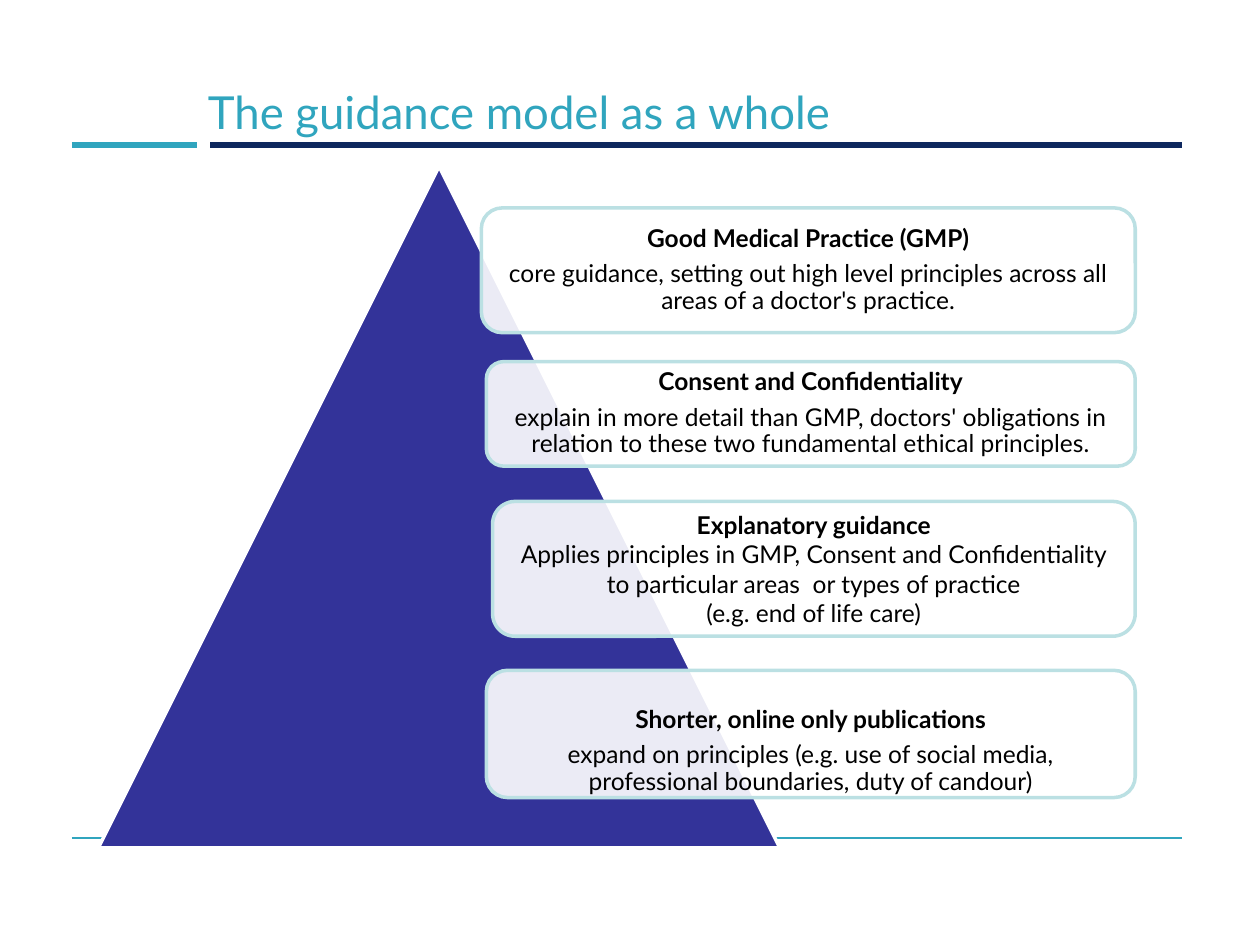
from dataclasses import dataclass

import pptx
import pptx.dml.color
import pptx.enum.shapes
import pptx.enum.text
import pptx.oxml
import pptx.oxml.ns
import pptx.slide
import pptx.util
from pptx.util import Inches, Pt

ALIGN = pptx.enum.text.PP_ALIGN
ANCHOR = pptx.enum.text.MSO_ANCHOR
SHAPE = pptx.enum.shapes.MSO_SHAPE


@dataclass(frozen=True)
class Theme:
    font: str = "Lato"
    title_size: int = 26
    body_size: int = 14
    teal: str = "30A5BE"
    navy: str = "0E285E"
    indigo: str = "333399"
    pale: str = "BBE0E3"
    white: str = "FFFFFF"
    black: str = "000000"
    panel_opacity: int = 90


@dataclass(frozen=True)
class Rule:
    left: float
    right: float
    top: float
    color: str
    weight: float


@dataclass(frozen=True)
class Panel:
    left: float
    top: float
    height: float
    heading: str
    details: tuple[str, ...]
    line_spacing: float = 0.9
    space_after: float = 5
    top_inset: float = 0.06


THEME = Theme()
PANEL_RIGHT = 9.01
PANEL_INSET = 0.06

RULES = (
    Rule(1.67, 9.38, 1.15, THEME.navy, 3),
    Rule(0.57, 1.56, 1.15, THEME.teal, 3),
    Rule(0.57, 9.38, 6.65, THEME.teal, 0.75),
)

PANELS = (
    Panel(3.82, 1.65, 0.99, "Good Medical Practice (GMP)",
          ("core guidance, setting out high level principles across all "
           "areas of a doctor's practice.",)),
    Panel(3.86, 2.87, 0.83, "Consent and Confidentiality",
          ("explain in more detail than GMP, doctors' obligations in "
           "relation to these two fundamental ethical principles.",)),
    Panel(3.91, 3.98, 1.07, "Explanatory guidance",
          ("Applies principles in GMP, Consent and Confidentiality "
           "to particular areas  or types of practice",
           "(e.g. end of life care)"),
          line_spacing=1, space_after=0),
    Panel(3.86, 5.32, 1.01, "Shorter, online only publications",
          ("expand on principles (e.g. use of social media, "
           "professional boundaries, duty of candour)",),
          top_inset=0.34),
)


def rgb(color: str) -> pptx.dml.color.RGBColor:
    return pptx.dml.color.RGBColor.from_string(color)


def add_run(para, text: str, size: float, color: str, bold: bool = False) -> None:
    span = para.add_run()
    span.text = text
    span.font.name = THEME.font
    span.font.size = Pt(size)
    span.font.bold = bold
    span.font.color.rgb = rgb(color)


def add_rule(page: pptx.slide.Slide, rule: Rule) -> None:
    line = page.shapes.add_connector(
        pptx.enum.shapes.MSO_CONNECTOR.STRAIGHT,
        Inches(rule.left), Inches(rule.top), Inches(rule.right), Inches(rule.top))
    line.line.color.rgb = rgb(rule.color)
    line.line.width = Pt(rule.weight)
    line._element.spPr.append(pptx.oxml.parse_xml(
        f'<a:effectLst {pptx.oxml.ns.nsdecls("a")}/>'))


def add_outlined(page: pptx.slide.Slide, kind: SHAPE, left: float, top: float,
                 width: float, height: float, fill: str, outline: str):
    box = page.shapes.add_shape(
        kind, Inches(left), Inches(top), Inches(width), Inches(height))
    box.shadow.inherit = False
    box.fill.solid()
    box.fill.fore_color.rgb = rgb(fill)
    box.line.color.rgb = rgb(outline)
    box.line.width = Pt(2)
    return box


def set_opacity(box, percent: int) -> None:
    color = box._element.spPr.find(
        f'{pptx.oxml.ns.qn("a:solidFill")}/{pptx.oxml.ns.qn("a:srgbClr")}')
    color.append(pptx.oxml.parse_xml(
        f'<a:alpha {pptx.oxml.ns.nsdecls("a")} val="{percent * 1000}"/>'))


def add_panel(page: pptx.slide.Slide, panel: Panel) -> None:
    box = add_outlined(page, SHAPE.ROUNDED_RECTANGLE, panel.left, panel.top,
                       PANEL_RIGHT - panel.left, panel.height,
                       THEME.white, THEME.pale)
    set_opacity(box, THEME.panel_opacity)
    frame = box.text_frame
    frame.word_wrap = True
    frame.vertical_anchor = ANCHOR.MIDDLE
    frame.margin_left = frame.margin_right = frame.margin_bottom = Inches(PANEL_INSET)
    frame.margin_top = Inches(panel.top_inset)
    for index, text in enumerate((panel.heading, *panel.details)):
        para = frame.add_paragraph() if index else frame.paragraphs[0]
        para.alignment = ALIGN.CENTER
        para.line_spacing = panel.line_spacing
        para.space_after = Pt(panel.space_after)
        add_run(para, text, THEME.body_size, THEME.black, bold=index == 0)


def set_title(page: pptx.slide.Slide, text: str) -> None:
    title = page.shapes.title
    title.left, title.top = Inches(1.55), Inches(0.52)
    title.width, title.height = Inches(7.83), Inches(0.73)
    frame = title.text_frame
    frame.auto_size = pptx.enum.text.MSO_AUTO_SIZE.NONE
    frame.vertical_anchor = ANCHOR.MIDDLE
    para = frame.paragraphs[0]
    para.alignment = ALIGN.LEFT
    add_run(para, text, THEME.title_size, THEME.teal)


def main() -> None:
    deck = pptx.Presentation()
    deck.slide_width, deck.slide_height = Inches(10), Inches(7.5)
    page = deck.slides.add_slide(deck.slide_layouts.get_by_name("Title Only"))
    set_title(page, "The guidance model as a whole")
    for rule in RULES:
        add_rule(page, rule)
    add_outlined(page, SHAPE.ISOSCELES_TRIANGLE, 0.78, 1.32, 5.41, 5.41,
                 THEME.indigo, THEME.white)
    for panel in PANELS:
        add_panel(page, panel)
    deck.save("out.pptx")


if __name__ == "__main__":
    main()
